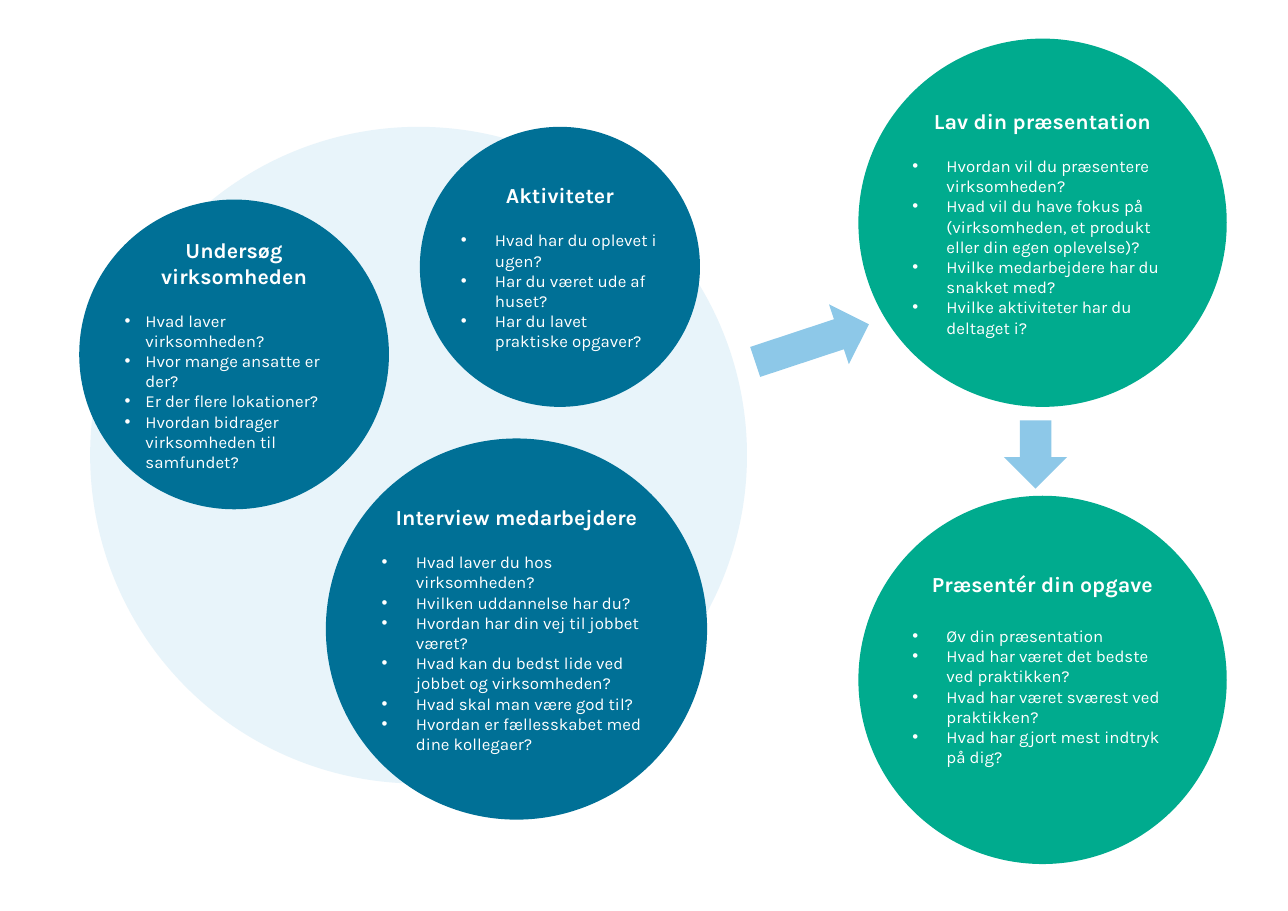
import pptx
import pptx.util
import pptx.dml.color
import pptx.enum.shapes
import pptx.enum.text
import lxml.etree

RGBColor = pptx.dml.color.RGBColor
Pt = pptx.util.Pt
MSO_SHAPE = pptx.enum.shapes.MSO_SHAPE
PP_ALIGN = pptx.enum.text.PP_ALIGN

BLUE = RGBColor(0x00, 0x70, 0x96)
GREEN = RGBColor(0x00, 0xAB, 0x8E)
SKY = RGBColor(0x8D, 0xC8, 0xE8)
WHITE = RGBColor(0xFF, 0xFF, 0xFF)

WIDTH = pptx.util.Inches(11.69)
HEIGHT = pptx.util.Inches(8.27)
CELL = WIDTH / 100
DRAWING = "http://schemas.openxmlformats.org/drawingml/2006/main"

HEADING_FONT = {"name": "Karla", "size": Pt(14), "bold": True}
QUESTION_FONT = {"name": "Karla", "size": Pt(11), "bold": False}
FRAME_FORMAT = {
    "word_wrap": True,
    "vertical_anchor": pptx.enum.text.MSO_ANCHOR.MIDDLE,
    "margin_left": 0,
    "margin_right": 0,
    "margin_top": 0,
    "margin_bottom": 0,
}
WIDE_INDENT = pptx.util.Inches(0.31)
NARROW_INDENT = pptx.util.Inches(0.19)

RESEARCH = ("Undersøg virksomheden", [
    "Hvad laver virksomheden?",
    "Hvor mange ansatte er der?",
    "Er der flere lokationer?",
    "Hvordan bidrager virksomheden til samfundet?",
])
INTERVIEW = ("Interview medarbejdere", [
    "Hvad laver du hos virksomheden?",
    "Hvilken uddannelse har du?",
    "Hvordan har din vej til jobbet været?",
    "Hvad kan du bedst lide ved jobbet og virksomheden?",
    "Hvad skal man være god til?",
    "Hvordan er fællesskabet med dine kollegaer?",
])
ACTIVITIES = ("Aktiviteter", [
    "Hvad har du oplevet i ugen?",
    "Har du været ude af huset?",
    "Har du lavet praktiske opgaver?",
])
PREPARE = ("Lav din præsentation", [
    "Hvordan vil du præsentere virksomheden?",
    "Hvad vil du have fokus på (virksomheden, et produkt eller din egen oplevelse)?",
    "Hvilke medarbejdere har du snakket med?",
    "Hvilke aktiviteter har du deltaget i?",
])
PRESENT = ("Præsentér din opgave", [
    "Øv din præsentation",
    "Hvad har været det bedste ved praktikken?",
    "Hvad har været sværest ved praktikken?",
    "Hvad har gjort mest indtryk på dig?",
])


def apply_format(target, values):
    for key, value in values.items():
        setattr(target, key, value)


def add_plain_shape(slide, preset, box, color):
    shape = slide.shapes.add_shape(preset, *(round(cells * CELL) for cells in box))
    shape.shadow.inherit = False
    shape.fill.solid()
    shape.fill.fore_color.rgb = color
    shape.line.fill.background()
    return shape


def write_paragraph(paragraph, text, font, layout):
    run = paragraph.add_run()
    run.text = text
    apply_format(run.font, font)
    run.font.color.rgb = WHITE
    apply_format(paragraph, layout)


def add_bullet(paragraph, indent):
    properties = paragraph._p.get_or_add_pPr()
    properties.set("marL", str(indent))
    properties.set("indent", str(-indent))
    bullet_font = lxml.etree.SubElement(properties, f"{{{DRAWING}}}buFont")
    bullet_font.set("typeface", "Arial")
    lxml.etree.SubElement(properties, f"{{{DRAWING}}}buChar").set("char", "•")


def add_topic(slide, box, color, topic, indent=WIDE_INDENT, gap=14.3, bottom=0):
    heading, questions = topic
    frame = add_plain_shape(slide, MSO_SHAPE.OVAL, box, color).text_frame
    apply_format(frame, {**FRAME_FORMAT, "margin_bottom": Pt(bottom)})
    write_paragraph(frame.paragraphs[0], heading, HEADING_FONT,
                    {"alignment": PP_ALIGN.CENTER, "space_after": Pt(gap)})
    for question in questions:
        paragraph = frame.add_paragraph()
        write_paragraph(paragraph, question, QUESTION_FONT, {"alignment": PP_ALIGN.LEFT})
        add_bullet(paragraph, indent)


def add_arrow(slide, box, rotation):
    add_plain_shape(slide, MSO_SHAPE.RIGHT_ARROW, box, SKY).rotation = rotation


def add_exploration(slide, left, top):
    backdrop = add_plain_shape(slide, MSO_SHAPE.OVAL, (left + 0.85, top, 51, 51), SKY)
    color = backdrop.fill._xPr.find(f".//{{{DRAWING}}}srgbClr")
    lxml.etree.SubElement(color, f"{{{DRAWING}}}alpha").set("val", "20000")
    add_topic(slide, (left, top + 5.65, 24.05, 24.05), BLUE, RESEARCH, NARROW_INDENT)
    add_topic(slide, (left + 19.15, top + 24.2, 29.6, 29.6), BLUE, INTERVIEW)
    add_topic(slide, (left + 26.45, top, 21.75, 21.75), BLUE, ACTIVITIES)


def add_delivery(slide, left, top, size):
    add_topic(slide, (left, top + 35.5, size, size), GREEN, PRESENT, gap=19, bottom=14.3)
    add_topic(slide, (left, top, size, size), GREEN, PREPARE)
    add_arrow(slide, (left + 11.1, top + 29.85, 5.3, 4.9), 90)


def main():
    deck = pptx.Presentation()
    apply_format(deck, {"slide_width": WIDTH, "slide_height": HEIGHT})
    slide = deck.slides.add_slide(deck.slide_layouts[6])
    add_arrow(slide, (58.4, 24.2, 9.3, 4.9), 341.7)
    add_exploration(slide, 6.15, 9.85)
    add_delivery(slide, 66.65, 3, 28.6)
    deck.save("out.pptx")


if __name__ == "__main__":
    main()
